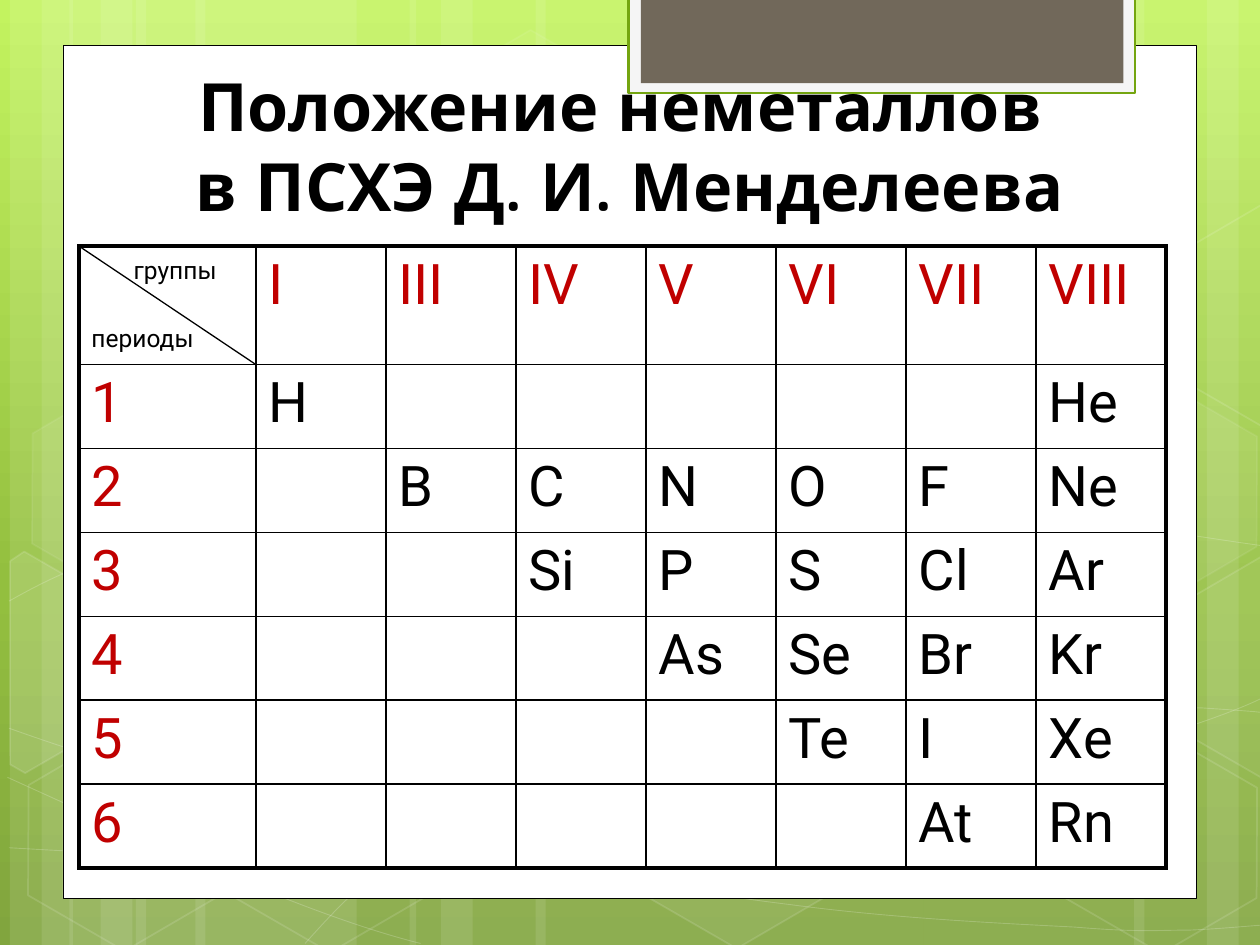
from copy import deepcopy

from lxml import etree
from pptx import Presentation
from pptx.dml.color import RGBColor
from pptx.enum.shapes import MSO_CONNECTOR, MSO_SHAPE
from pptx.enum.text import MSO_ANCHOR, PP_ALIGN
from pptx.oxml.ns import qn
from pptx.util import Cm, Pt

RECT, HEXAGON = MSO_SHAPE.RECTANGLE, MSO_SHAPE.HEXAGON
STRAIGHT = MSO_CONNECTOR.STRAIGHT
TOP, MIDDLE, BOTTOM = MSO_ANCHOR.TOP, MSO_ANCHOR.MIDDLE, MSO_ANCHOR.BOTTOM
LEFT, CENTER = PP_ALIGN.LEFT, PP_ALIGN.CENTER
WHITE, BLACK, RED = "FFFFFF", "000000", "C00000"
SLIDE_W, SLIDE_H = 25.4, 19.05

# left, width and rotation of each light stripe
STRIPES = [(2.74, 4.45, 0), (0.2, 1.27, 0), (0.84, 2.11, 0), (3.94, 4.45, 0),
           (1.4, 1.27, 0), (2.03, 2.11, 0), (18.62, 4.45, 180),
           (24.33, 1.27, 180), (22.86, 2.11, 180), (10.8, 7.82, 0),
           (8.26, 1.27, 0), (8.89, 2.11, 0)]
# start point, then two control points and an end point per curved segment,
# or an end point alone per straight one
CURVES = [
    [(0.18, 17.09), (1.55, 17.17, 2.92, 17.25, 4.83, 17.22),
     (6.73, 17.2, 9.09, 17.15, 11.63, 16.89),
     (14.17, 16.64, 17.78, 16.15, 20.12, 15.67),
     (22.43, 15.19, 24.82, 14.43, 25.58, 14)],
    [(0.18, 12.12), (0.91, 11.71, 1.65, 11.33, 3.07, 10.95),
     (4.52, 10.57, 6.58, 10.01, 8.81, 9.83),
     (11.07, 9.65, 13.82, 9.63, 16.61, 9.83),
     (19.41, 10.03, 24.05, 10.82, 25.58, 11.02)],
    [(0.15, 15.67), (3.23, 17.07, 6.27, 18.47, 8.48, 19.02)],
    [(0.18, 14.68), (0.97, 14.96, 1.78, 15.24, 3.25, 15.65),
     (4.72, 16.03, 6.93, 16.66, 9.07, 17.09),
     (11.18, 17.53, 13.84, 17.98, 15.95, 18.24),
     (18.06, 18.52, 20.32, 18.62, 21.67, 18.69),
     (22.99, 18.8, 23.34, 18.75, 24, 18.75),
     (24.66, 18.72, 25.12, 18.67, 25.58, 18.64)],
    [(6.15, 19.02), (6.6, 18.52, 7.06, 18.01, 7.67, 17.55),
     (8.28, 17.09, 9.14, 16.59, 9.86, 16.23),
     (10.57, 15.88, 11, 15.72, 11.94, 15.47),
     (12.85, 15.21, 14.55, 14.86, 15.44, 14.68),
     (16.36, 14.5, 16.48, 14.5, 17.27, 14.45),
     (18.06, 14.38, 19.3, 14.3, 20.17, 14.27),
     (21.06, 14.25, 22.5, 14.27, 22.5, 14.27), (24.21, 14.27),
     (24.66, 14.3, 25.1, 14.33, 25.32, 14.35),
     (25.55, 14.38, 25.48, 14.35, 25.55, 14.38)],
]
# left, top, fill opacity, line opacity (percent)
HEXAGONS = [(8.48, 0.91, 4, 8), (12.62, 14.96, 6, 12), (0.28, 15.01, 0, 12),
            (0.36, 7.92, 7, 8), (4.42, 15.04, 0, 12), (19.13, 11.51, 10, 12),
            (21.18, 15.06, 0, 12), (21.18, 7.98, 7, 8)]
LEFT_CUT = [(0, 0.31), (0.15, 0), (2.4, 0),
            (3.5, 1.95), (2.4, 3.86), (2.05, 3.86)]
RIGHT_CUT = [(0, 1.91), (1.09, 0), (1.32, 0),
             (3.45, 3.66), (3.33, 3.86), (1.09, 3.86)]
# left, top, outline, fill opacity
CUT_HEXAGONS = [(-0.84, 11.66, LEFT_CUT, 10), (23.29, 11.28, RIGHT_CUT, 4),
                (23.29, 4.19, RIGHT_CUT, 0)]

GROUPS = ["I", "III", "IV", "V", "VI", "VII", "VIII"]
PERIODS = [["H", "", "", "", "", "", "He"],
           ["", "B", "C", "N", "O", "F", "Ne"],
           ["", "", "Si", "P", "S", "Cl", "Ar"],
           ["", "", "", "As", "Se", "Br", "Kr"],
           ["", "", "", "", "Te", "I", "Xe"],
           ["", "", "", "", "", "At", "Rn"]]


def rgb(value):
    return RGBColor.from_string(value)


def paint(fill, color, opacity=100):
    """Fill with a solid colour; opacity 0 means no fill."""
    if not opacity:
        fill.background()
        return
    fill.solid()
    fill.fore_color.rgb = rgb(color)
    if opacity < 100:
        clr = fill._xPr.find(qn("a:solidFill"))[0]
        etree.SubElement(clr, qn("a:alpha"), val=str(opacity * 1000))


def style(sp, fill=WHITE, opacity=100, line=None, width=1, line_opacity=100):
    sp.shadow.inherit = False
    paint(sp.fill, fill, opacity)
    paint(sp.line.fill, line or WHITE, line_opacity if line else 0)
    if line:
        sp.line.width = Pt(width)


def add_shape(s, kind, x, y, w, h, **fmt):
    sp = s.shapes.add_shape(kind, Cm(x), Cm(y), Cm(w), Cm(h))
    style(sp, **fmt)
    return sp


def add_outline(s, x, y, points, close, **fmt):
    pts = [(Cm(x + px), Cm(y + py)) for px, py in points]
    builder = s.shapes.build_freeform(*pts[0])
    builder.add_line_segments(pts[1:], close=close)
    sp = builder.convert_to_shape()
    style(sp, **fmt)
    return sp


def add_curve(s, x, y, start, *segments, **fmt):
    """Lay a path through all control points, then bend its segments."""
    points = [start]
    for seg in segments:
        points += zip(seg[::2], seg[1::2])
    sp = add_outline(s, x, y, points, False, **fmt)
    steps = iter(sp._element.findall(".//" + qn("a:lnTo")))
    for seg in segments:
        first = next(steps)
        if len(seg) == 6:
            first.tag = qn("a:cubicBezTo")
            for _ in range(2):
                step = next(steps)
                first.append(step[0])
                step.getparent().remove(step)


def write(p, text, font="Roboto", size=32, color=BLACK, bold=False,
          align=LEFT, indent=0):
    for i, part in enumerate(text.split("\n")):
        if i:
            p.add_line_break()
        r = p.add_run()
        r.text = part
        r.font.name, r.font.size, r.font.bold = font, Pt(size), bold
        r.font.color.rgb = rgb(color)
    p.alignment = align
    if indent:
        p._p.get_or_add_pPr().set("marL", str(Cm(indent)))


def add_background(s):
    fill = s.background.fill
    fill.gradient()
    fill.gradient_angle = 270
    stops = s.element.find(".//" + qn("a:gsLst"))
    stops.append(deepcopy(stops[0]))
    colors = [("C3F35F", 0), ("93BF3F", 0.62), ("81A53E", 1)]
    for stop, (color, position) in zip(fill.gradient_stops, colors):
        stop.color.rgb = rgb(color)
        stop.position = position


def add_pattern(s, x, y, h):
    for left, width, rotation in STRIPES:
        sp = add_shape(s, RECT, x + left, y, width, h, opacity=10)
        sp.rotation = rotation
    for curve in CURVES:
        add_curve(s, x, y, *curve,
                  opacity=0, line=WHITE, width=0.5, line_opacity=20)
    for left, top, opacity, line_opacity in HEXAGONS:
        sp = add_shape(s, HEXAGON, x + left, y + top, 4.45, 3.86, line=WHITE,
                       opacity=opacity, line_opacity=line_opacity)
        sp.rotation = 30
        sp.adjustments[0], sp.adjustments[1] = 0.285, 1.155
    for left, top, points, opacity in CUT_HEXAGONS:
        sp = add_outline(s, x + left, y + top, points, True,
                         opacity=opacity, line=WHITE, line_opacity=12)
        sp.rotation = 30


def add_panel(s, x, y, w, h):
    """White sheet with the tab that hangs from the slide's top edge."""
    add_shape(s, RECT, x, y, w, h, line=BLACK, width=0.5)
    add_shape(s, RECT, x + 11.4, y - 0.96, 10.21, 1.93,
              fill="F5F5F5", line="74A510", width=1.25)
    add_shape(s, RECT, x + 11.65, y - 0.96, 9.73, 1.73, fill="71685A")


def add_title(s, x, y, w, h):
    tf = s.shapes.add_textbox(Cm(x), Cm(y), Cm(w), Cm(h)).text_frame
    tf.word_wrap = True
    tf.vertical_anchor = BOTTOM
    write(tf.paragraphs[0], "Положение неметаллов \nв ПСХЭ Д. И. Менделеева",
          font="Quicksand", size=38, bold=True, align=CENTER)


def set_borders(cell, **widths):
    for side in "LRTB":
        ln = etree.SubElement(cell._tc.get_or_add_tcPr(), qn("a:ln" + side),
                              w=str(Pt(widths[side])))
        fill = etree.SubElement(ln, qn("a:solidFill"))
        etree.SubElement(fill, qn("a:srgbClr"), val=BLACK)


def add_element_table(s, x, y, w, h, head_w=3.57, head_h=2.39):
    rows = [["", *GROUPS]]
    rows += [[str(n), *row] for n, row in enumerate(PERIODS, 1)]
    last_r, last_c = len(PERIODS), len(GROUPS)
    table = s.shapes.add_table(last_r + 1, last_c + 1,
                               Cm(x), Cm(y), Cm(w), Cm(h)).table
    table.first_row = table.horz_banding = False
    for i, col in enumerate(table.columns):
        col.width = Cm((w - head_w) / last_c if i else head_w)
    for i, row in enumerate(table.rows):
        row.height = Cm((h - head_h) / last_r if i else head_h)
    for i, row in enumerate(rows):
        for j, text in enumerate(row):
            cell = table.cell(i, j)
            set_borders(cell, L=1 if j else 2.25, T=1 if i else 2.25,
                        R=2.25 if j == last_c else 1,
                        B=2.25 if i == last_r else 1)
            paint(cell.fill, WHITE)
            cell.vertical_anchor = TOP
            if text:
                write(cell.text_frame.paragraphs[0], text,
                      color=BLACK if i and j else RED)
    corner = table.cell(0, 0)
    corner.vertical_anchor = MIDDLE
    tf = corner.text_frame
    write(tf.paragraphs[0], "группы", size=14, indent=0.85)
    p = tf.add_paragraph()
    write(p, "периоды", size=14)
    p.space_before = Pt(22)
    diagonal = s.shapes.add_connector(STRAIGHT, Cm(x), Cm(y),
                                      Cm(x + head_w), Cm(y + head_h))
    diagonal.line.color.rgb = rgb(BLACK)
    diagonal.line.width = Pt(0.75)
    etree.SubElement(diagonal._element.spPr, qn("a:effectLst"))


def main():
    prs = Presentation()
    prs.slide_width, prs.slide_height = Cm(SLIDE_W), Cm(SLIDE_H)
    s = prs.slides.add_slide(prs.slide_layouts[6])
    add_background(s)
    add_pattern(s, 0, 0, SLIDE_H)
    add_panel(s, 1.27, 0.91, 22.86, 17.2)
    add_title(s, 1.57, 0.58, 22.23, 4.07)
    add_element_table(s, 1.59, 4.96, 21.92, 12.54)
    prs.save("out.pptx")


if __name__ == "__main__":
    main()
